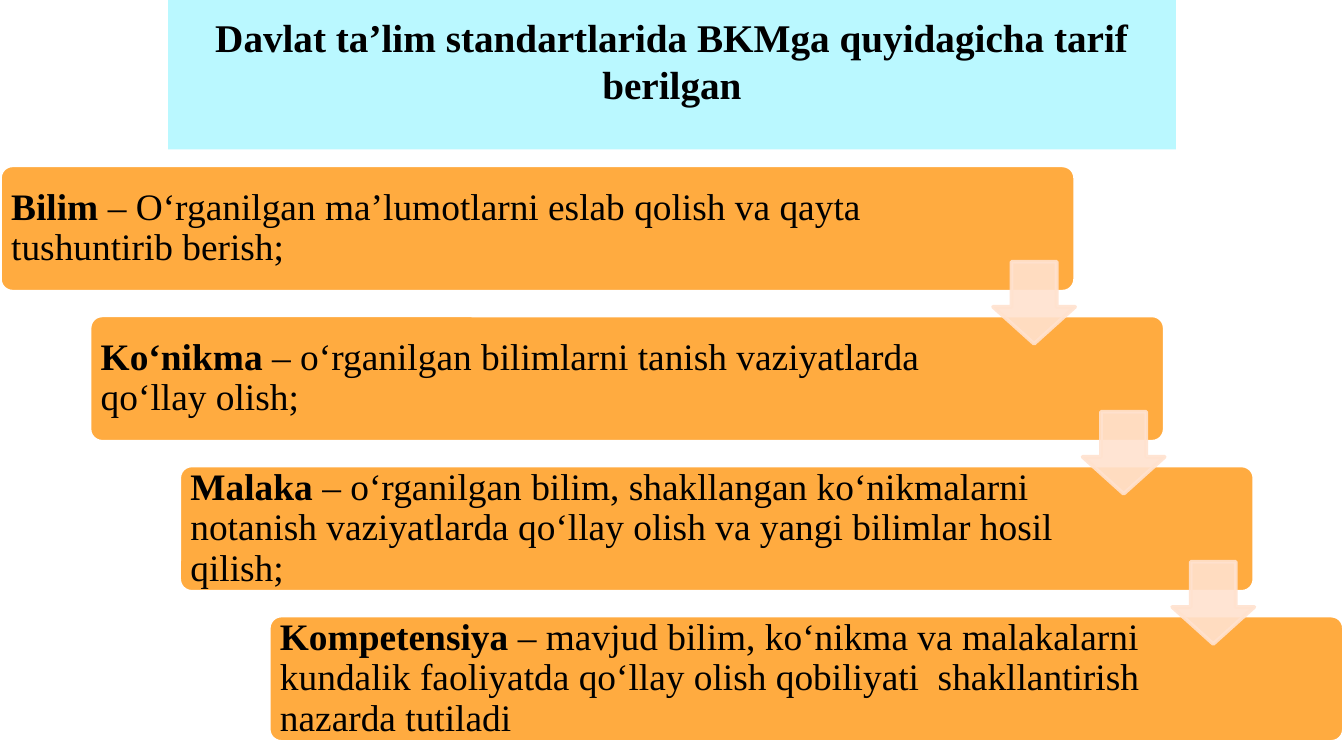
from lxml.etree import SubElement
from pptx import Presentation
from pptx.dml.color import RGBColor
from pptx.enum.shapes import MSO_SHAPE
from pptx.enum.text import MSO_ANCHOR, MSO_AUTO_SIZE, PP_ALIGN
from pptx.oxml.ns import qn
from pptx.util import Pt

FONT = "Times New Roman"
STEPS = [
    ("Bilim", " – O‘rganilgan ma’lumotlarni eslab qolish va qayta tushuntirib berish;"),
    ("Ko‘nikma", " – o‘rganilgan bilimlarni tanish vaziyatlarda qo‘llay olish;"),
    ("Malaka", " – o‘rganilgan bilim, shakllangan ko‘nikmalarni notanish vaziyatlarda "
               "qo‘llay olish va yangi bilimlar hosil qilish;"),
    ("Kompetensiya", " – mavjud bilim, ko‘nikma va malakalarni kundalik faoliyatda "
                     "qo‘llay olish qobiliyati  shakllantirish nazarda tutiladi"),
]


def color(value):
    return RGBColor.from_string(value)


def add_text(p, text, size=20, bold=False, fill="000000"):
    r = p.add_run()
    r.text = text
    r.font.name = FONT
    r.font.size = Pt(size)
    r.font.bold = bold
    r.font.color.rgb = color(fill)


def paint(fill, value, alpha=None):
    fill.solid()
    fill.fore_color.rgb = color(value)
    if alpha is not None:
        for clr in fill._xPr.iter(qn("a:srgbClr")):
            SubElement(clr, qn("a:alpha"), val=str(alpha * 1000))


def set_frame(tf, inset, anchor):
    tf.word_wrap = True
    tf.auto_size = MSO_AUTO_SIZE.NONE
    tf.vertical_anchor = anchor
    tf.margin_left = tf.margin_right = Pt(inset)
    tf.margin_top = tf.margin_bottom = Pt(inset)


class StepSlide:
    title_fill, box_fill, arrow_fill, outline = "BAF8FF", "FFAB40", "FFE2CF", "FFFFFF"

    def __init__(self, prs):
        self.s = prs.slides.add_slide(prs.slide_layouts[5])

    def title(self, text, x, y, w, h):
        sp = self.s.shapes.title
        sp.left, sp.top, sp.width, sp.height = Pt(x), Pt(y), Pt(w), Pt(h)
        paint(sp.fill, self.title_fill)
        set_frame(sp.text_frame, 7.2, MSO_ANCHOR.TOP)
        p = sp.text_frame.paragraphs[0]
        p.alignment = PP_ALIGN.CENTER
        add_text(p, text, size=21, bold=True)

    def shape(self, kind, x, y, w, h, adjustments, fill, line, alpha=None):
        sp = self.s.shapes.add_shape(kind, Pt(x), Pt(y), Pt(w), Pt(h))
        for i, value in enumerate(adjustments):
            sp.adjustments[i] = value
        sp.shadow.inherit = False
        paint(sp.fill, fill, alpha)
        paint(sp.line.fill, line, alpha)
        sp.line.width = Pt(2)

    def box(self, x, y, w, h):
        self.shape(MSO_SHAPE.ROUNDED_RECTANGLE, x, y, w, h, [0.1],
                   self.box_fill, self.outline)

    def arrow(self, x, y, size):
        self.shape(MSO_SHAPE.DOWN_ARROW, x, y, size, size, [0.55, 0.45],
                   self.arrow_fill, self.arrow_fill, alpha=90)

    def definition(self, term, meaning, x, y, w, h):
        tf = self.s.shapes.add_textbox(Pt(x), Pt(y), Pt(w), Pt(h)).text_frame
        set_frame(tf, 6, MSO_ANCHOR.MIDDLE)
        p = tf.paragraphs[0]
        p.line_spacing = 0.9
        p.space_after = Pt(7)
        add_text(p, term, bold=True)
        add_text(p, meaning)


def main():
    prs = Presentation()
    prs.slide_width, prs.slide_height = Pt(720), Pt(405)
    slide = StepSlide(prs)

    # Heading
    slide.title("Davlat ta’lim standartlarida BKMga quyidagicha tarif berilgan",
                90, 0, 540, 80)

    # Staircase of definitions
    dx, dy, top, height = 48, 80.4, 88.6, 67.7
    for i, (term, meaning) in enumerate(STEPS):
        x, y = i * dx, top + i * dy
        slide.box(x, y, 576, height)
        slide.definition(term, meaning, x, y, 484 if i else 501, height)

    # Arrows between neighbouring steps
    for i in range(len(STEPS) - 1):
        slide.arrow(532 + i * dx, 140.2 + i * dy, 44)

    prs.save("out.pptx")


if __name__ == "__main__":
    main()
